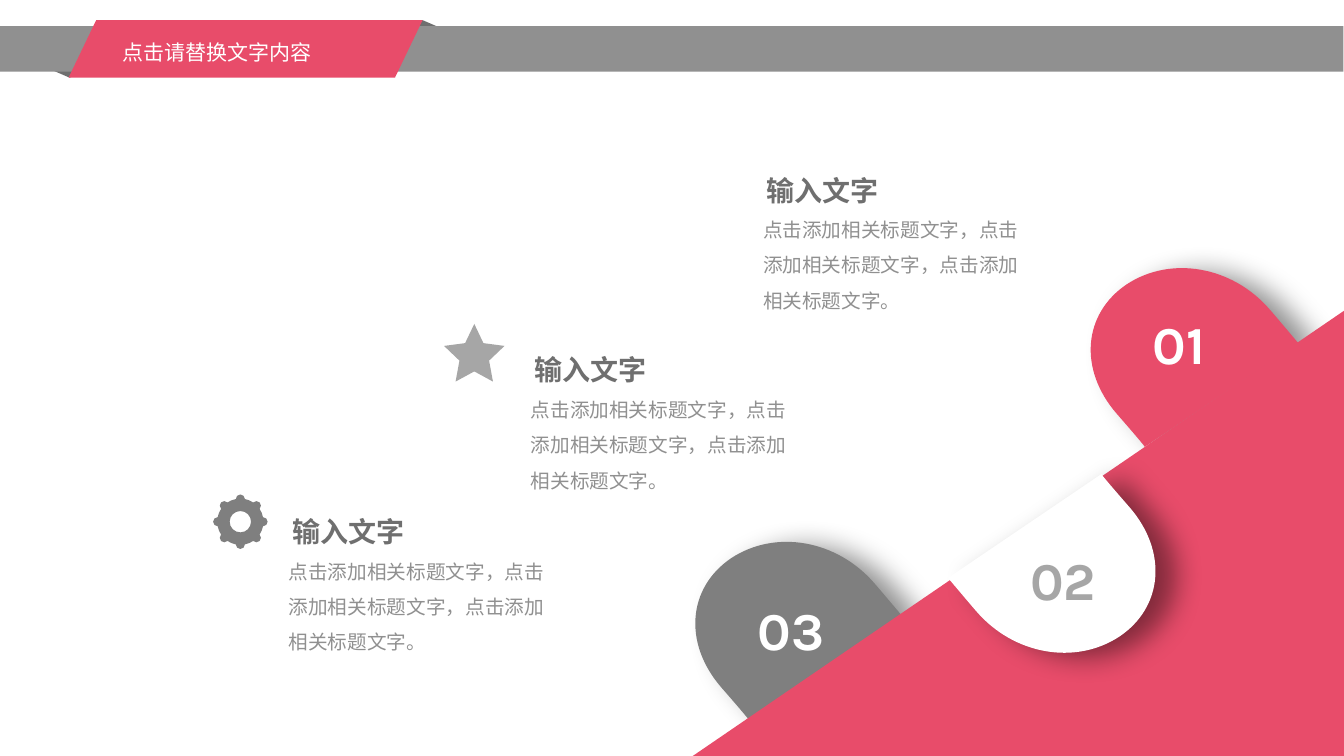
from dataclasses import dataclass
from math import asin, cos, pi, sin, tan

from lxml import etree
from pptx import Presentation
from pptx.dml.color import RGBColor
from pptx.enum.shapes import MSO_SHAPE
from pptx.enum.text import MSO_ANCHOR, MSO_AUTO_SIZE, PP_ALIGN
from pptx.oxml.ns import qn
from pptx.util import Pt

RECTANGLE = MSO_SHAPE.RECTANGLE
TRIANGLE = MSO_SHAPE.ISOSCELES_TRIANGLE
PARALLELOGRAM = MSO_SHAPE.PARALLELOGRAM
STAR = MSO_SHAPE.STAR_5_POINT
LEFT = PP_ALIGN.LEFT
TOP = MSO_ANCHOR.TOP
GROW = MSO_AUTO_SIZE.SHAPE_TO_FIT_TEXT

PINK = RGBColor(0xE8, 0x4C, 0x6A)
WHITE = RGBColor(0xFF, 0xFF, 0xFF)
DARK_GRAY = RGBColor(0x6F, 0x6F, 0x6F)
GRAY = RGBColor(0x7F, 0x7F, 0x7F)
BAND_GRAY = RGBColor(0x90, 0x90, 0x90)
LIGHT_GRAY = RGBColor(0xA6, 0xA6, 0xA6)

PAGE_WIDTH, PAGE_HEIGHT = 959.4, 539.6
CHINESE_FONT = "Noto Sans CJK SC"
DESCRIPTION = "点击添加相关标题文字，点击添加相关标题文字，点击添加相关标题文字。"

Point = tuple[float, float]

# Start, then three points for each curve, relative to the corner on the slope
DROP_OUTLINE = [
    (0, 0),
    (0, 0), (-19.44, -23.04), (-20.16, -23.76),
    (-46.8, -54.72), (-90.72, -62.64), (-122.4, -41.76),
    (-153.36, -20.88), (-156.96, 18.72), (-129.6, 50.4),
    (-129.6, 50.4), (-109.44, 73.44), (-109.44, 74.16),
]


@dataclass
class Style:
    size: float
    font: str
    color: RGBColor
    bold: bool = False
    spacing: float = 1.0


@dataclass
class Drop:
    corner: Point
    color: RGBColor
    turn: int = 1  # -1 turns the drop by half a circle


@dataclass
class Number:
    text: str
    corner: Point
    color: RGBColor


TITLE = Style(15, "Arial", WHITE, spacing=1.5)
HEADING = Style(20, "Arial", DARK_GRAY, True, 1.2)
BODY = Style(14, CHINESE_FONT, BAND_GRAY, spacing=1.5)

UPPER_DROPS = [
    Drop((926.64, 244.8), PINK),
    Drop((644.4, 440.2), GRAY),
]
LOWER_DROP = Drop((676.8, 412.56), WHITE, -1)
NUMBERS = [
    Number("01", (815.76, 218.88), WHITE),
    Number("02", (728.2, 387.36), LIGHT_GRAY),
    Number("03", (533.8, 422.64), WHITE),
]
HEADING_CORNERS = [(540.3, 115.2), (374.5, 243.6), (201.7, 359)]


def paint(shape, color: RGBColor) -> None:
    shape.shadow.inherit = False
    shape.fill.solid()
    shape.fill.fore_color.rgb = color
    shape.line.fill.background()


def add_preset(shapes, preset, left: float, top: float, width: float,
               height: float, color: RGBColor):
    shape = shapes.add_shape(preset, Pt(left), Pt(top), Pt(width), Pt(height))
    paint(shape, color)
    return shape


def add_outline(page, contours: list[list[Point]], color: RGBColor):
    """Draw closed contours as one filled freeform."""
    scaled = [[(Pt(x), Pt(y)) for x, y in contour] for contour in contours]
    builder = page.shapes.build_freeform(*scaled[0][0])
    builder.add_line_segments(scaled[0][1:], close=True)
    for contour in scaled[1:]:
        builder.move_to(*contour[0])
        builder.add_line_segments(contour[1:], close=True)
    shape = builder.convert_to_shape()
    paint(shape, color)
    return shape


def bend(shape) -> None:
    """Turn each three line segments of a freeform into one Bezier curve."""
    lines = list(shape.element.iter(qn("a:lnTo")))
    for first in range(0, len(lines), 3):
        curve = etree.Element(qn("a:cubicBezTo"))
        lines[first].addprevious(curve)
        for line in lines[first:first + 3]:
            curve.append(line[0])
            line.getparent().remove(line)


def add_shadow(shape) -> None:
    effects = shape.element.spPr.find(qn("a:effectLst"))
    shadow = etree.SubElement(effects, qn("a:outerShdw"), blurRad=str(Pt(20)),
                              dist=str(Pt(15)), dir=str(12 * 60000),
                              algn="ctr", rotWithShape="0")
    color = etree.SubElement(shadow, qn("a:srgbClr"), val="000000")
    etree.SubElement(color, qn("a:alpha"), val="43000")


def add_drop(page, drop: Drop) -> None:
    left, top = drop.corner
    points = [(left + drop.turn * x, top + drop.turn * y)
              for x, y in DROP_OUTLINE]
    shape = add_outline(page, [points], drop.color)
    bend(shape)
    add_shadow(shape)


def around(center: Point, radius: float, angle: float) -> Point:
    return center[0] + radius * cos(angle), center[1] + radius * sin(angle)


def arc(center: Point, radius: float, start: float, end: float) -> list[Point]:
    """Give the two controls and the end of the curve along an arc."""
    handle = 4 / 3 * tan((end - start) / 4) * radius
    first, last = around(center, radius, start), around(center, radius, end)
    return [around(first, handle, start + pi / 2),
            around(last, handle, end - pi / 2), last]


def add_gear(page, center: Point, color: RGBColor) -> None:
    body, tooth, distance, hole = 16.5, 3.24, 16.2, 7.6
    half_tooth = asin(tooth / body)
    rim = [around(center, body, -half_tooth)]
    opening = [around(center, hole, 0)]
    for angle in (step * pi / 4 for step in range(8)):
        middle = around(center, distance, angle)
        rim += arc(middle, tooth, angle - pi / 2, angle)
        rim += arc(middle, tooth, angle, angle + pi / 2)
        rim += arc(center, body, angle + half_tooth, angle + pi / 4 - half_tooth)
    for angle in (-step * pi / 2 for step in range(4)):
        opening += arc(center, hole, angle, angle - pi / 2)
    bend(add_outline(page, [rim, opening], color))


def write(shape, text: str, style: Style) -> None:
    frame = shape.text_frame
    frame.word_wrap = True
    frame.auto_size = GROW
    frame.vertical_anchor = TOP
    para = frame.paragraphs[0]
    para.alignment = LEFT
    para.line_spacing = style.spacing
    span = para.add_run()
    span.text = text
    span.font.size = Pt(style.size)
    span.font.bold = style.bold
    span.font.color.rgb = style.color
    span.font.name = style.font
    etree.SubElement(span.font._element, qn("a:ea"), typeface=CHINESE_FONT)


def add_text(page, left: float, top: float, width: float, height: float,
             text: str, style: Style):
    box = page.shapes.add_textbox(Pt(left), Pt(top), Pt(width), Pt(height))
    write(box, text, style)
    return box


def add_title_ribbon(page) -> None:
    ribbon = page.shapes.add_group_shape().shapes
    add_preset(ribbon, TRIANGLE, 258.48, 14.4, 86.4, 18.72, DARK_GRAY)
    lower_fold = add_preset(ribbon, TRIANGLE, 6.48, 36.72, 86.4, 18.72, DARK_GRAY)
    lower_fold.rotation = 180
    add_preset(ribbon, RECTANGLE, 0, 18.72, 959, 32.4, BAND_GRAY)
    label = add_preset(ribbon, PARALLELOGRAM, 48.96, 14.4, 252.72, 41.04, PINK)
    label.adjustments[0] = 0.48

    title = page.shapes.title
    title.left, title.top = Pt(79.92), Pt(15.84)
    title.width, title.height = Pt(189.36), Pt(34.56)
    write(title, "点击请替换文字内容", TITLE)
    title.element.getparent().append(title.element)


def main() -> None:
    deck = Presentation()
    deck.slide_width, deck.slide_height = Pt(PAGE_WIDTH), Pt(PAGE_HEIGHT)
    page = deck.slides.add_slide(deck.slide_layouts[5])

    for drop in UPPER_DROPS:
        add_drop(page, drop)
    add_outline(page, [[(494.5, PAGE_HEIGHT), (PAGE_WIDTH, PAGE_HEIGHT),
                        (PAGE_WIDTH, 221.8)]], PINK)
    add_drop(page, LOWER_DROP)

    star = add_preset(page.shapes, STAR, 317, 231.2, 43.2, 41.2, LIGHT_GRAY)
    star.adjustments[0] = 0.245
    add_gear(page, (171.6, 372.4), GRAY)

    for left, top in HEADING_CORNERS:
        add_text(page, left - 2.7, top + 28.4, 198, 80.64, DESCRIPTION, BODY)
        add_text(page, left, top, 181.44, 33.84, "输入文字", HEADING)
    for number in NUMBERS:
        style = Style(38, "Karla", number.color, True)
        box = add_text(page, *number.corner, 64.08, 53.28, number.text, style)
        if number.color == LIGHT_GRAY:
            box.fill.solid()
            box.fill.fore_color.rgb = WHITE

    add_title_ribbon(page)
    deck.save("out.pptx")


if __name__ == "__main__":
    main()
